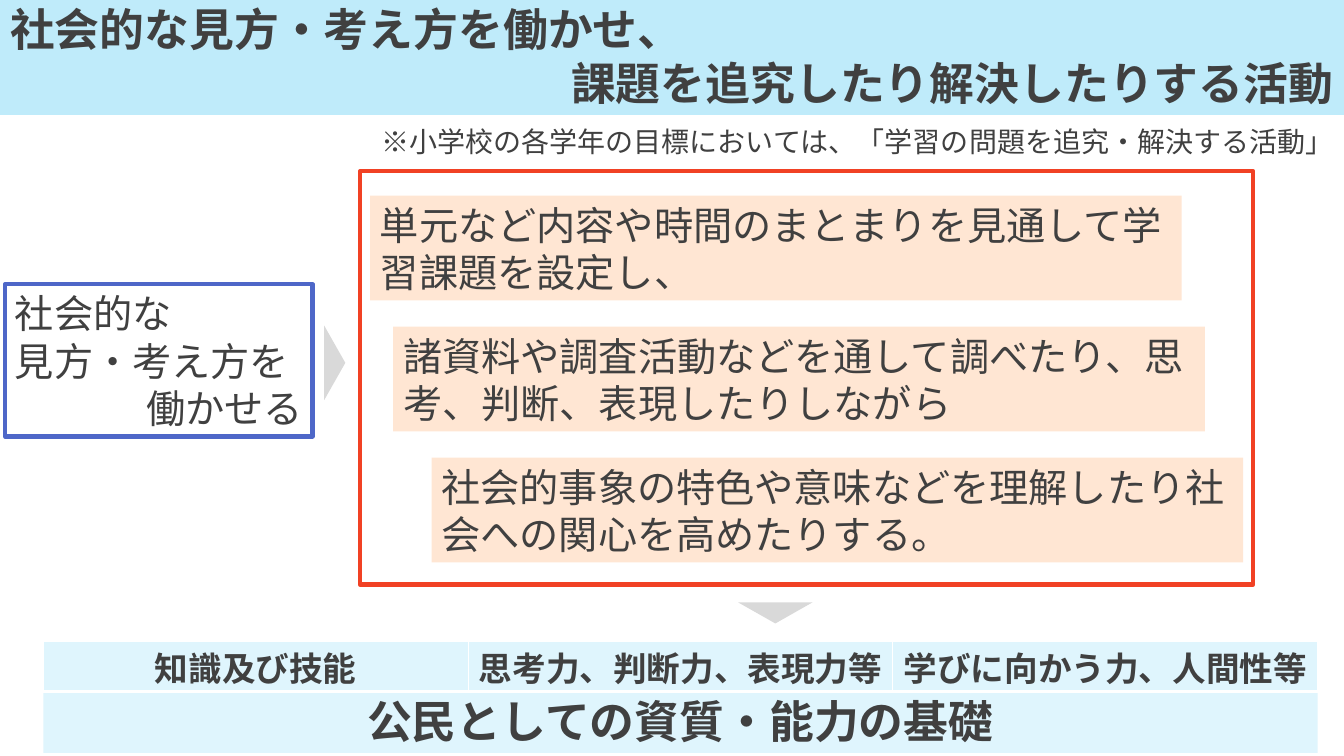
from lxml import etree
from pptx import Presentation
from pptx.dml.color import RGBColor
from pptx.enum.shapes import MSO_SHAPE
from pptx.enum.text import MSO_ANCHOR, PP_ALIGN
from pptx.oxml.ns import qn
from pptx.util import Inches, Pt

LEFT, CENTER, RIGHT = PP_ALIGN.LEFT, PP_ALIGN.CENTER, PP_ALIGN.RIGHT
MIDDLE = MSO_ANCHOR.MIDDLE
RECTANGLE, TRIANGLE = MSO_SHAPE.RECTANGLE, MSO_SHAPE.ISOSCELES_TRIANGLE

FONT = "Noto Sans CJK JP"
LINE_PITCH = 1.21
INK = RGBColor(0x40, 0x40, 0x40)
WHITE = RGBColor(0xFF, 0xFF, 0xFF)
SKY = RGBColor(0xBF, 0xEB, 0xFA)
PALE_SKY = RGBColor(0xDF, 0xF5, 0xFD)
PEACH = RGBColor(0xFF, 0xE6, 0xD3)
BLUE = RGBColor(0x4E, 0x67, 0xC8)
RED = RGBColor(0xF1, 0x41, 0x24)
GRAY = RGBColor(0xD9, 0xD9, 0xD9)


def write(frame, lines, size=28, bold=False, aligns=(LEFT,)):
    """Write lines into a text frame; the last alignment serves any further lines."""
    frame.word_wrap = True
    frame.vertical_anchor = MIDDLE
    frame.margin_left = frame.margin_right = Inches(0.1)
    frame.margin_top = frame.margin_bottom = Inches(0.05)
    for index, line in enumerate(lines):
        paragraph = frame.paragraphs[0] if index == 0 else frame.add_paragraph()
        paragraph.alignment = aligns[min(index, len(aligns) - 1)]
        paragraph.line_spacing = Pt(round(size * LINE_PITCH, 1))
        paragraph.space_before = paragraph.space_after = Pt(0)
        run = paragraph.add_run()
        run.text = line
        font = run.font
        font.name, font.size, font.bold = FONT, Pt(size), bold
        font.color.rgb = INK
        east_asian = etree.SubElement(run._r.get_or_add_rPr(), qn("a:ea"))
        east_asian.set("typeface", FONT)


def add_box(slide, box, fill=None, line=None, kind=RECTANGLE):
    """Add a preset shape without shadow, filled and outlined as asked."""
    shape = slide.shapes.add_shape(kind, *map(Inches, box))
    shape.shadow.inherit = False
    if fill is None:
        shape.fill.background()
    else:
        shape.fill.solid()
        shape.fill.fore_color.rgb = fill
    if line is None:
        shape.line.fill.background()
    else:
        shape.line.color.rgb = line
        shape.line.width = Pt(3)
    return shape


def add_heading(slide, box):
    """Place the title band and the note right under it."""
    left, top, width, height = box
    title = slide.shapes.title
    title.left, title.top, title.width, title.height = map(Inches, box)
    title.fill.solid()
    title.fill.fore_color.rgb = SKY
    write(title.text_frame, ["社会的な見方・考え方を働かせ、", "課題を追究したり解決したりする活動"],
          size=32, bold=True, aligns=(LEFT, RIGHT))
    note = slide.shapes.add_textbox(*map(Inches, (left, top + height + 0.04, width, 0.44)))
    write(note.text_frame, ["※小学校の各学年の目標においては、「学習の問題を追究・解決する活動」"],
          size=20, aligns=(RIGHT,))


def add_viewpoint(slide, box):
    """Draw the framed starting point on the left."""
    viewpoint = add_box(slide, box, WHITE, BLUE)
    write(viewpoint.text_frame, ["社会的な", "見方・考え方を", "働かせる"],
          aligns=(LEFT, LEFT, RIGHT))


def add_process(slide, box):
    """Draw the red frame with its three stepped stages."""
    left, top, _, _ = box
    stages = [
        (0.1, "単元など内容や時間のまとまりを見通して学習課題を設定し、"),
        (0.33, "諸資料や調査活動などを通して調べたり、思考、判断、表現したりしながら"),
        (0.71, "社会的事象の特色や意味などを理解したり社会への関心を高めたりする。"),
    ]
    for index, (indent, wording) in enumerate(stages):
        stage = add_box(slide, (left + indent, top + 0.24 + 1.3 * index, 8.05, 1.04), PEACH)
        write(stage.text_frame, [wording])
    add_box(slide, box, line=RED)


def set_border(cell, side, points):
    """Give one side of a table cell a white border."""
    border = etree.SubElement(cell._tc.get_or_add_tcPr(), qn(f"a:{side}"),
                              w=str(Pt(points)))
    fill = etree.SubElement(border, qn("a:solidFill"))
    etree.SubElement(fill, qn("a:srgbClr"), val=str(WHITE))


def add_abilities(slide, box):
    """Place the row of three abilities above the civic foundation bar."""
    left, top, width, height = box
    row_height = 0.5
    bar_top = top + 0.47
    foundation = add_box(slide, (left, bar_top, width, top + height - bar_top), PALE_SKY)
    write(foundation.text_frame, ["公民としての資質・能力の基礎"],
          size=32, bold=True, aligns=(CENTER,))

    abilities = ["知識及び技能", "思考力、判断力、表現力等", "学びに向かう力、人間性等"]
    table = slide.shapes.add_table(
        1, len(abilities), *map(Inches, (left, top, width, row_height))).table
    for cell, ability in zip(table.rows[0].cells, abilities):
        for side, points in (("lnL", 1), ("lnR", 1), ("lnT", 1), ("lnB", 3)):
            set_border(cell, side, points)
        cell.fill.solid()
        cell.fill.fore_color.rgb = PALE_SKY
        write(cell.text_frame, [ability], size=24, bold=True, aligns=(CENTER,))
        cell.vertical_anchor = MIDDLE
        cell.margin_top, cell.margin_bottom = Inches(0.09), Inches(0)
        cell.margin_left = cell.margin_right = Inches(0.05)


def add_pointer(slide, center_x, center_y, rotation):
    """Draw a flat gray triangle turned around its centre."""
    width, height = 0.74, 0.21
    box = (center_x - width / 2, center_y - height / 2, width, height)
    add_box(slide, box, GRAY, kind=TRIANGLE).rotation = rotation


def main():
    """Build the slide and save it."""
    deck = Presentation()
    deck.slide_width, deck.slide_height = Inches(13.33), Inches(7.5)
    slide = deck.slides.add_slide(deck.slide_layouts[5])
    add_heading(slide, (0, -0.04, 13.33, 1.18))
    add_viewpoint(slide, (0.05, 2.82, 3.05, 1.51))
    add_abilities(slide, (0.43, 6.36, 12.64, 1.11))
    add_process(slide, (3.57, 1.7, 8.86, 4.1))
    add_pointer(slide, 3.32, 3.6, rotation=90)
    add_pointer(slide, 7.69, 6.08, rotation=180)
    deck.save("out.pptx")


if __name__ == "__main__":
    main()
